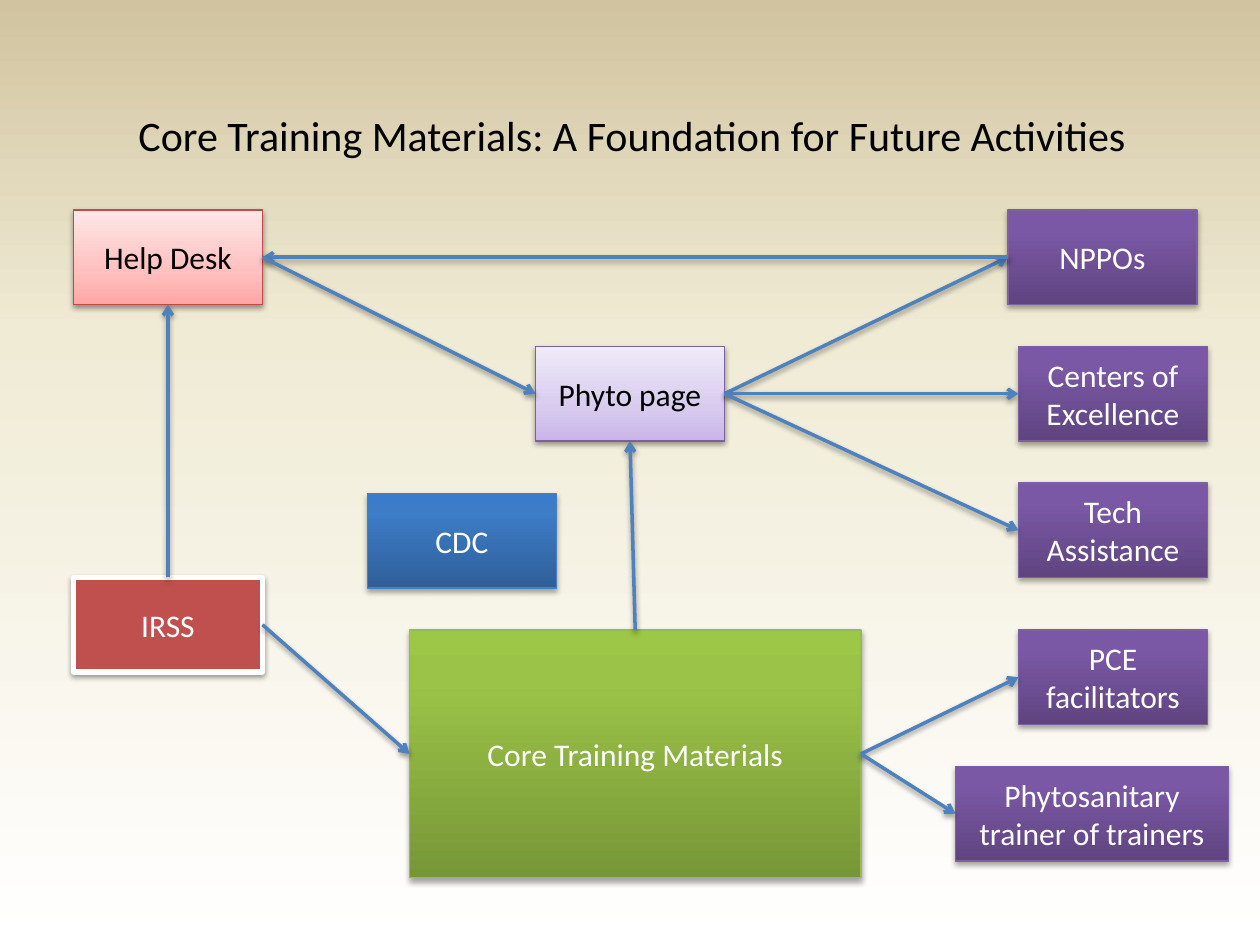
from copy import deepcopy
from typing import NamedTuple

from lxml import etree
from pptx import Presentation, util as u
from pptx.dml.color import RGBColor
from pptx.enum import shapes, text
from pptx.oxml.ns import qn

UNIT = u.Inches(1) // 12
TOP, LEFT, BOTTOM, RIGHT = range(4)
FONT = "Calibri"
HEX = {
    "black": "000000", "white": "FFFFFF", "arrow": "4F81BD", "red": "C0504D",
    "sand": "F0EBD5", "tan": "D1C39F",
    "green": "779737", "green mid": "9BC348", "green top": "9DC746", "green edge": "98B955",
    "lilac": "C9B5E8", "lilac mid": "D8CBEE", "lilac top": "F0EAF9",
    "plum": "5F4480", "plum mid": "7B58A6", "plum top": "7C57A8", "plum edge": "7D60A0",
    "blue": "2F5F99", "blue mid": "3D7CC7", "blue top": "3A7CCB", "blue edge": "4B7EBC",
    "pink": "FFA6A5", "pink mid": "FFC0BF", "pink top": "FFE7E7", "pink edge": "BF4C48",
}


class Style(NamedTuple):
    fills: tuple[str, ...]
    edge: str
    ink: str = "white"
    mid: float = 0.8
    width: float = 0.75
    alpha: int = 35
    drop: float = 1.8


class Box(NamedTuple):
    label: str
    style: str
    col: float
    row: float
    cols: float = 18
    rows: float = 9


class Link(NamedTuple):
    start: str
    out: int
    end: str
    into: int


STYLES = {
    "core": Style(("green", "green mid", "green top"), "green edge"),
    "page": Style(("lilac", "lilac mid", "lilac top"), "plum edge", "black", 0.35, alpha=38, drop=1.6),
    "user": Style(("plum", "plum mid", "plum top"), "plum edge"),
    "irss": Style(("red",), "white", width=3, alpha=38, drop=1.6),
    "cdc": Style(("blue", "blue mid", "blue top"), "blue edge"),
    "desk": Style(("pink", "pink mid", "pink top"), "pink edge", "black", 0.35, alpha=38, drop=1.6),
}
BOXES = [
    Box("Core Training Materials", "core", 39, 60, 43, 23.6),
    Box("Phyto page", "page", 51, 33),
    Box("PCE facilitators", "user", 97, 60),
    Box("Phytosanitary trainer of trainers", "user", 91, 73, 26),
    Box("IRSS", "irss", 7, 55),
    Box("CDC", "cdc", 35, 47),
    Box("Help Desk", "desk", 7, 20),
    Box("Centers of Excellence", "user", 97, 33),
    Box("NPPOs", "user", 96, 20),
    Box("Tech Assistance", "user", 97, 46),
]
LINKS = [
    Link("IRSS", RIGHT, "Core Training Materials", LEFT),
    Link("Core Training Materials", TOP, "Phyto page", BOTTOM),
    Link("Core Training Materials", RIGHT, "PCE facilitators", LEFT),
    Link("IRSS", TOP, "Help Desk", BOTTOM),
    Link("Core Training Materials", RIGHT, "Phytosanitary trainer of trainers", LEFT),
    Link("Phyto page", RIGHT, "NPPOs", LEFT),
    Link("Phyto page", RIGHT, "Centers of Excellence", LEFT),
    Link("Phyto page", RIGHT, "Tech Assistance", LEFT),
    Link("NPPOs", LEFT, "Help Desk", RIGHT),
    Link("Help Desk", RIGHT, "Phyto page", LEFT),
]


def tint(name: str) -> RGBColor:
    return RGBColor.from_string(HEX[name])


def grid(*spans: float) -> list[int]:
    return [round(span * UNIT) for span in spans]


def blend(fill, root, names: tuple[str, ...], mid: float) -> None:
    fill.gradient()
    fill.gradient_angle = 90
    stops = next(root.iter(qn("a:gsLst")))
    stops.append(deepcopy(stops[-1]))
    for stop, name, spot in zip(fill.gradient_stops, names, (0, mid, 1)):
        stop.color.rgb = tint(name)
        stop.position = spot


def shade(props, alpha: int, drop: float) -> None:
    for old in props.findall(qn("a:effectLst")):
        props.remove(old)
    group = etree.SubElement(props, qn("a:effectLst"))
    cast = etree.SubElement(
        group, qn("a:outerShdw"), blurRad=str(u.Pt(3.15)), dist=str(u.Pt(drop)),
        dir="5400000", rotWithShape="0")
    color = etree.SubElement(cast, qn("a:srgbClr"), val=HEX["black"])
    etree.SubElement(color, qn("a:alpha"), val=str(alpha * 1000))


def write(frame, label: str, size: float, ink: str, align) -> None:
    frame.word_wrap = True
    para = frame.paragraphs[0]
    para.alignment = align
    run = para.add_run()
    run.text = label
    run.font.name = FONT
    run.font.size = u.Pt(size)
    run.font.color.rgb = tint(ink)


def draw(slide, box: Box):
    style = STYLES[box.style]
    shape = slide.shapes.add_shape(
        shapes.MSO_SHAPE.RECTANGLE, *grid(box.col, box.row, box.cols, box.rows))
    if len(style.fills) == 1:
        shape.fill.solid()
        shape.fill.fore_color.rgb = tint(style.fills[0])
    else:
        blend(shape.fill, shape.element, style.fills, style.mid)
    shape.line.color.rgb = tint(style.edge)
    shape.line.width = u.Pt(style.width)
    shape.shadow.inherit = False
    shade(shape.element.spPr, style.alpha, style.drop)
    shape.text_frame.vertical_anchor = text.MSO_ANCHOR.MIDDLE
    write(shape.text_frame, box.label, 18, style.ink, text.PP_ALIGN.CENTER)
    return shape


def join(slide, nodes: dict, link: Link) -> None:
    wire = slide.shapes.add_connector(shapes.MSO_CONNECTOR.STRAIGHT, 0, 0, 0, 0)
    wire.begin_connect(nodes[link.start], link.out)
    wire.end_connect(nodes[link.end], link.into)
    wire.line.color.rgb = tint("arrow")
    wire.line.width = u.Pt(2)
    props = wire.element.spPr
    etree.SubElement(props.find(qn("a:ln")), qn("a:tailEnd"), type="arrow")
    shade(props, 38, 1.6)


def main() -> None:
    deck = Presentation()
    deck.slide_width, deck.slide_height = grid(120, 90)
    slide = deck.slides.add_slide(deck.slide_layouts[6])
    blend(slide.background.fill, slide.element, ("white", "sand", "tan"), 0.65)
    nodes = {box.label: draw(slide, box) for box in BOXES}
    for link in LINKS:
        join(slide, nodes, link)
    title = slide.shapes.add_textbox(*grid(12, 9.8, 99, 6)).text_frame
    title.auto_size = text.MSO_AUTO_SIZE.SHAPE_TO_FIT_TEXT
    write(title, "Core Training Materials: A Foundation for Future Activities",
          24, "black", text.PP_ALIGN.LEFT)
    deck.save("out.pptx")


if __name__ == "__main__":
    main()
